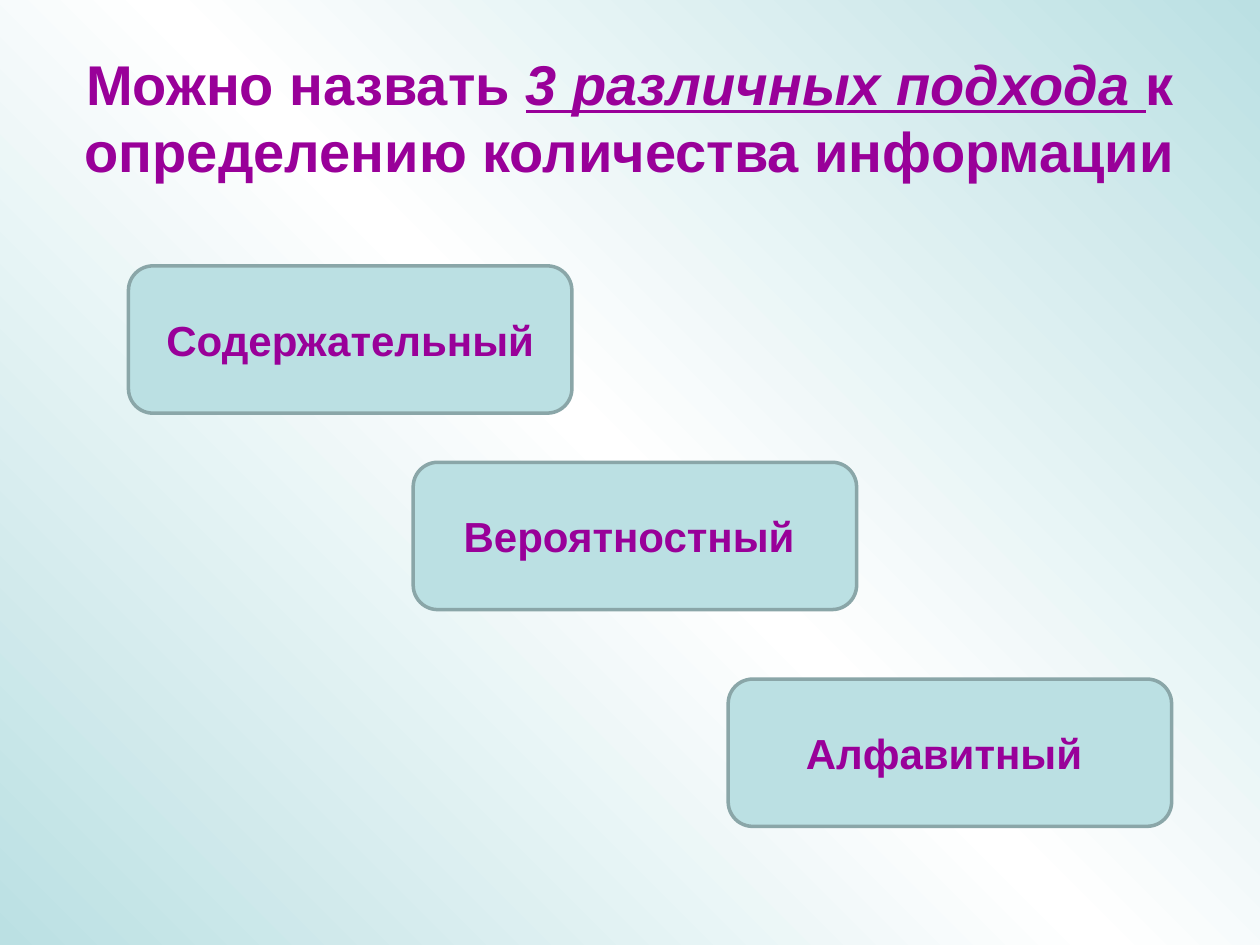
from copy import deepcopy
from pptx import Presentation
from pptx import util as u
from pptx.dml import color as c
from pptx.enum import shapes, text
from pptx.oxml import ns


def rgb(value):
    return c.RGBColor.from_string(value)


def add_run(paragraph, content, size, **extra):
    run = paragraph.add_run()
    run.text = content
    values = {"name": "Arial", "size": u.Pt(size), "bold": True, **extra}
    for name, value in values.items():
        setattr(run.font, name, value)
    run.font.color.rgb = rgb("990099")


presentation = Presentation()
presentation.slide_width = u.Cm(25.4)
presentation.slide_height = u.Cm(19.05)
slide = presentation.slides.add_slide(presentation.slide_layouts[5])

background = slide.background.fill
background.gradient()
background.gradient_angle = 45
stop_list = slide.element.find(".//" + ns.qn("a:gsLst"))
stop_list.insert(1, deepcopy(stop_list[0]))
gradient = [(0, "BBE0E3"), (0.5, "FFFFFF"), (1, "BBE0E3")]
for stop, (position, colour) in zip(background.gradient_stops, gradient):
    stop.position = position
    stop.color.rgb = rgb(colour)

title = slide.shapes.title
title_box = {"left": 1.27, "top": 0.76, "width": 22.86, "height": 3.18}
for name, value in title_box.items():
    setattr(title, name, u.Cm(value))
frame_format = {
    "vertical_anchor": text.MSO_ANCHOR.MIDDLE,
    "word_wrap": True,
    "auto_size": text.MSO_AUTO_SIZE.NONE,
}
for name, value in frame_format.items():
    setattr(title.text_frame, name, value)
heading = title.text_frame.paragraphs[0]
heading.alignment = text.PP_ALIGN.CENTER
add_run(heading, "Можно назвать ", 32)
add_run(heading, "3 различных подхода ", 32, italic=True, underline=True)
add_run(heading, "к определению количества информации", 32)

approaches = [
    ("Содержательный", 2.59, 5.36),
    ("Вероятностный ", 8.33, 9.32),
    ("Алфавитный ", 14.68, 13.69),
]
for label, left, top in approaches:
    shape = slide.shapes.add_shape(
        shapes.MSO_SHAPE.ROUNDED_RECTANGLE,
        u.Cm(left), u.Cm(top), u.Cm(8.94), u.Cm(2.97),
    )
    shape.shadow.inherit = False
    shape.fill.solid()
    shape.fill.fore_color.rgb = rgb("BBE0E3")
    shape.line.color.rgb = rgb("8AA6A8")
    shape.line.width = u.Pt(2)
    for name, value in frame_format.items():
        setattr(shape.text_frame, name, value)
    paragraph = shape.text_frame.paragraphs[0]
    paragraph.alignment = text.PP_ALIGN.CENTER
    add_run(paragraph, label, 24)

presentation.save("out.pptx")
